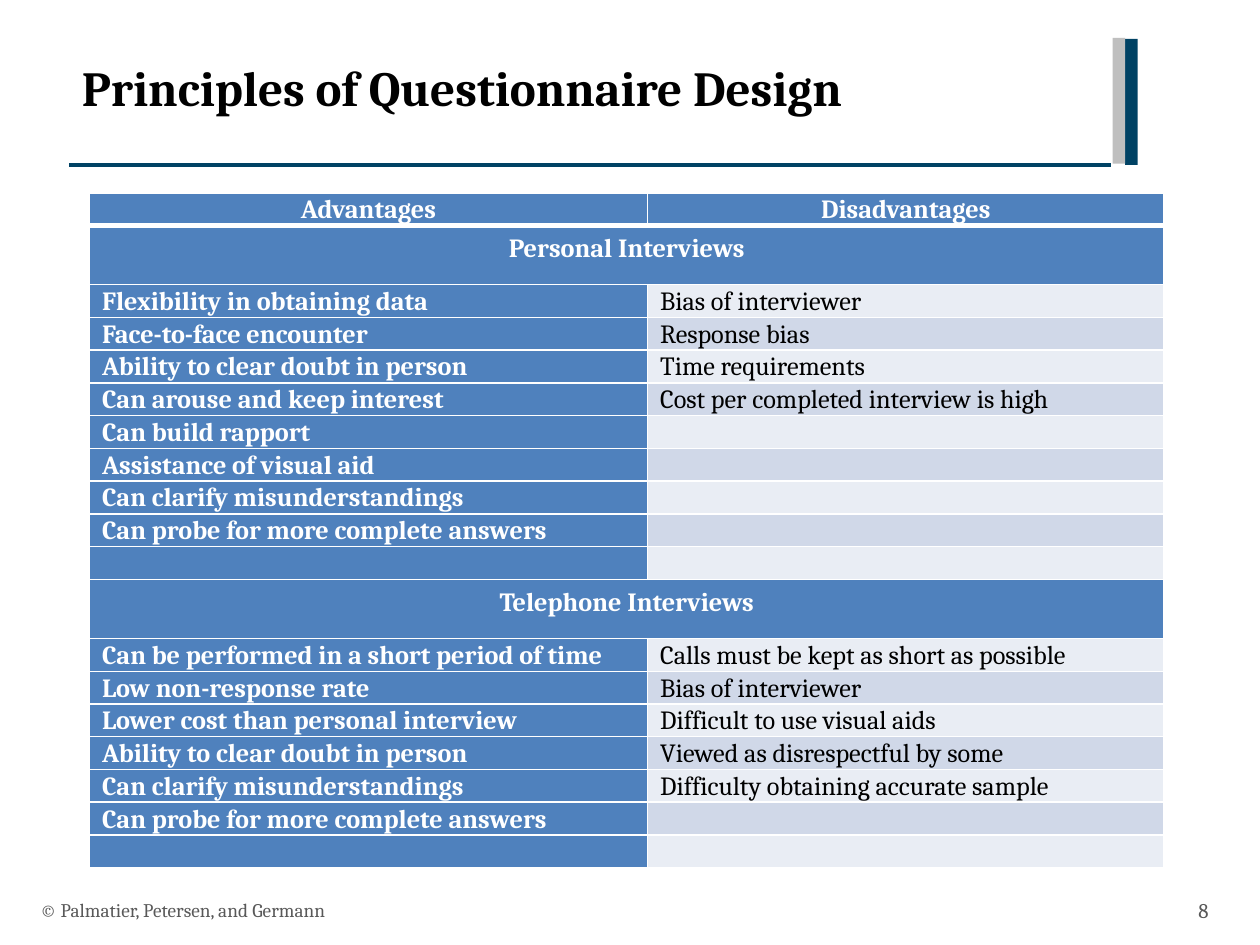
from dataclasses import dataclass

from lxml.etree import SubElement
from pptx import Presentation
from pptx.dml.color import RGBColor
from pptx.enum.shapes import MSO_CONNECTOR, MSO_SHAPE
from pptx.enum.text import MSO_ANCHOR as Anchor, PP_ALIGN as Align
from pptx.oxml import parse_xml
from pptx.oxml.ns import nsdecls, qn
from pptx.util import Inches, Pt

# Content
TITLE = "Principles of Questionnaire Design"
COPYRIGHT = "© Palmatier, Petersen, and Germann"
PAGE_NUMBER = "8"
HEADINGS = ("Advantages", "Disadvantages")
INTERVIEW_TYPES = {
    "Personal Interviews": [
        ("Flexibility in obtaining data", "Bias of interviewer"),
        ("Face-to-face encounter", "Response bias"),
        ("Ability to clear doubt in person", "Time requirements"),
        ("Can arouse and keep interest", "Cost per completed interview is high"),
        ("Can build rapport", ""),
        ("Assistance of visual aid", ""),
        ("Can clarify misunderstandings", ""),
        ("Can probe for more complete answers", ""),
        ("", ""),
    ],
    "Telephone Interviews": [
        ("Can be performed in a short period of time",
         "Calls must be kept as short as possible"),
        ("Low non-response rate", "Bias of interviewer"),
        ("Lower cost than personal interview", "Difficult to use visual aids"),
        ("Ability to clear doubt in person", "Viewed as disrespectful by some"),
        ("Can clarify misunderstandings", "Difficulty obtaining accurate sample"),
        ("Can probe for more complete answers", ""),
        ("", ""),
    ],
}


@dataclass(frozen=True)
class Theme:
    font: str = "Cambria"
    ink: str = "000000"
    white: str = "FFFFFF"
    muted: str = "595959"
    navy: str = "004264"
    grey: str = "BFBFBF"
    blue: str = "4F81BD"
    bands: tuple = ("E9EDF4", "D0D8E8")
    title_size: float = 28
    table_size: float = 15
    footer_size: float = 11
    number_size: float = 12


THEME = Theme()

# Layout, in inches
SLIDE_W, SLIDE_H = 10, 7.5
TITLE_BOX = (0.55, 0.41, 8.26, 1.22)
RULE_Y, RULE_LEFT, RULE_RIGHT = 1.31, 0.55, 8.82
BARS = [((8.93, 0.31, 0.1, 1), THEME.navy), ((8.83, 0.3, 0.1, 1), THEME.grey)]
TABLE_LEFT, TABLE_TOP = 0.71, 1.53
COLUMNS = (4.43, 4.1)
ROW_H, SECTION_H = 0.26, 0.47
FOOTER_TOP, FOOTER_H = 7.02, 0.4


def inches(box):
    return [Inches(length) for length in box]


def color(value):
    return RGBColor.from_string(value)


def write(frame, text, size, ink, bold=False, align=Align.LEFT):
    frame.text = text
    paragraph = frame.paragraphs[0]
    paragraph.alignment = align
    for run in paragraph.runs:
        run.font.name, run.font.size, run.font.bold = THEME.font, Pt(size), bold
        run.font.color.rgb = color(ink)
    return paragraph


def add_footer(slide, left, width, text, size, align):
    box = slide.shapes.add_textbox(*inches((left, FOOTER_TOP, width, FOOTER_H)))
    box.text_frame.word_wrap = True
    box.text_frame.vertical_anchor = Anchor.MIDDLE
    write(box.text_frame, text, size, THEME.muted, align=align)


def set_borders(cell, top=1, bottom=1):
    widths = {"lnL": 1, "lnR": 1, "lnT": top, "lnB": bottom}
    for place, (side, width) in enumerate(widths.items()):
        cell._tc.get_or_add_tcPr().insert(place, parse_xml(
            f'<a:{side} {nsdecls("a")} w="{Pt(width)}"><a:solidFill>'
            f'<a:srgbClr val="{THEME.white}"/></a:solidFill></a:{side}>'))


def fill_cell(cell, text, fill, ink=THEME.white, bold=True, align=Align.LEFT,
              inset=(0.1, 0), anchor=Anchor.TOP, **borders):
    paragraph = write(cell.text_frame, text, THEME.table_size, ink, bold, align)
    paragraph.line_spacing = 1.07
    if not text:  # keeps an empty row as low as the others
        SubElement(paragraph._p, qn("a:endParaRPr"), sz=str(THEME.table_size * 100))
    cell.margin_left = cell.margin_right = Inches(inset[0])
    cell.margin_top = cell.margin_bottom = Inches(inset[1])
    cell.vertical_anchor = anchor
    cell.fill.solid()
    cell.fill.fore_color.rgb = color(fill)
    set_borders(cell, **borders)


def add_comparison(slide):
    heights = [ROW_H]
    for points in INTERVIEW_TYPES.values():
        heights += [SECTION_H] + [ROW_H] * len(points)
    table = slide.shapes.add_table(
        len(heights), len(COLUMNS),
        *inches((TABLE_LEFT, TABLE_TOP, sum(COLUMNS), sum(heights)))).table
    for column, width in zip(table.columns, COLUMNS):
        column.width = Inches(width)
    for row, height in zip(table.rows, heights):
        row.height = Inches(height)

    for column, heading in enumerate(HEADINGS):
        fill_cell(table.cell(0, column), heading, THEME.blue, align=Align.CENTER,
                  anchor=Anchor.BOTTOM, bottom=3)
    row = 1
    for section, points in INTERVIEW_TYPES.items():
        section_cell = table.cell(row, 0)
        section_cell.merge(table.cell(row, 1))
        fill_cell(section_cell, section, THEME.blue, align=Align.CENTER,
                  inset=(0.11, 0.05), top=3 if row == 1 else 1)
        for band, (advantage, disadvantage) in enumerate(points):
            row += 1
            fill_cell(table.cell(row, 0), advantage, THEME.blue)
            fill_cell(table.cell(row, 1), disadvantage, THEME.bands[band % 2],
                      ink=THEME.ink, bold=False)
        row += 1


def main():
    deck = Presentation()
    deck.slide_width, deck.slide_height = Inches(SLIDE_W), Inches(SLIDE_H)
    slide = deck.slides.add_slide(deck.slide_layouts[5])

    # Title with rule and corner bars
    rule = slide.shapes.add_connector(
        MSO_CONNECTOR.STRAIGHT,
        *inches((RULE_LEFT, RULE_Y, RULE_RIGHT, RULE_Y)))
    rule.line.color.rgb, rule.line.width = color(THEME.navy), Pt(2)
    SubElement(rule._element.spPr, qn("a:effectLst"))
    for box, fill in BARS:
        bar = slide.shapes.add_shape(MSO_SHAPE.RECTANGLE, *inches(box))
        bar.shadow.inherit = False
        bar.fill.solid()
        bar.fill.fore_color.rgb = color(fill)
        bar.line.fill.background()
    title = slide.shapes.title
    title.left, title.top, title.width, title.height = inches(TITLE_BOX)
    title.text_frame.vertical_anchor = Anchor.TOP
    write(title.text_frame, TITLE, THEME.title_size, THEME.ink, bold=True)

    # Comparison table
    add_comparison(slide)

    # Footer
    add_footer(slide, 0.22, 6.7, COPYRIGHT, THEME.footer_size, Align.LEFT)
    add_footer(slide, 9.08, 0.61, PAGE_NUMBER, THEME.number_size, Align.RIGHT)
    deck.save("out.pptx")


if __name__ == "__main__":
    main()
